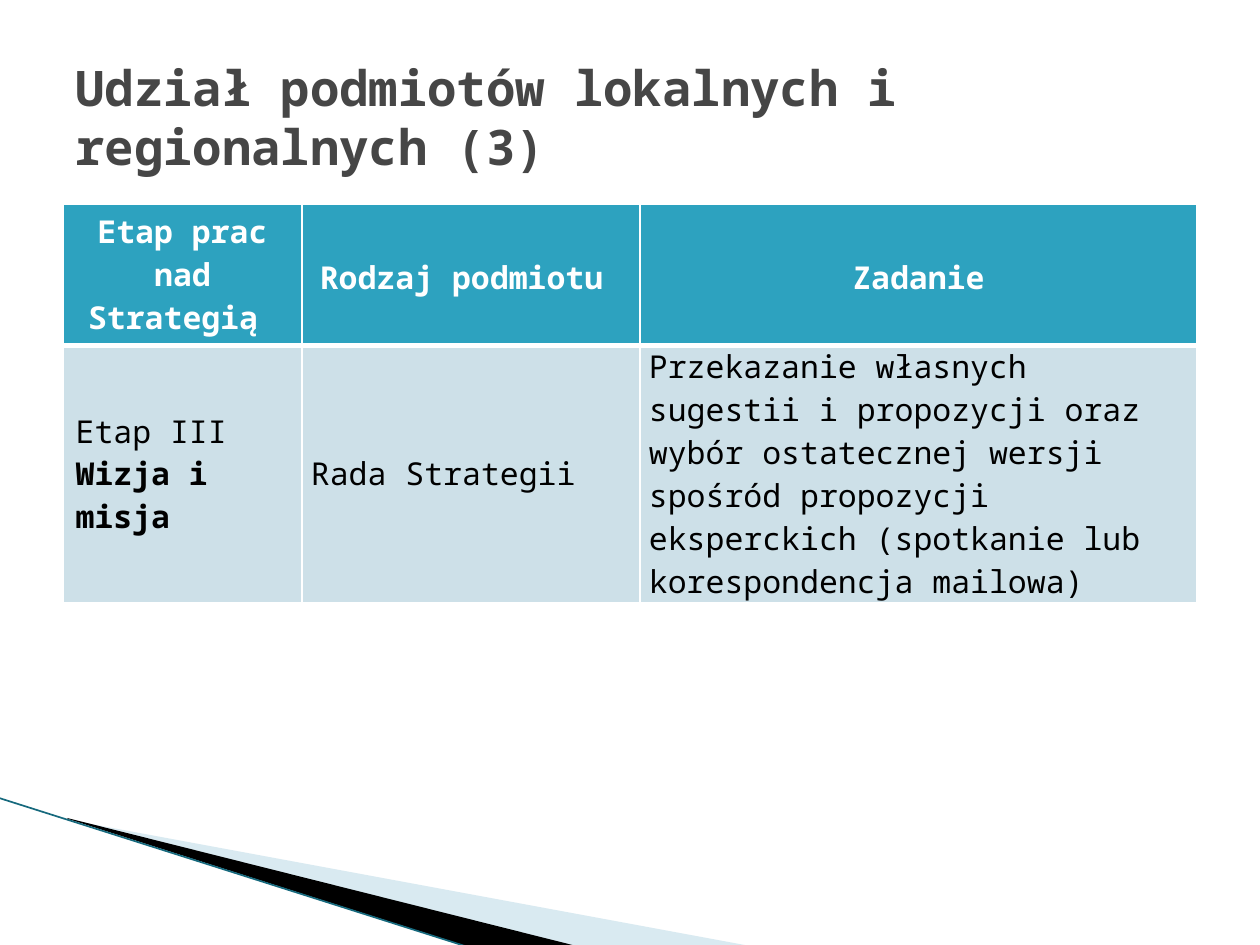
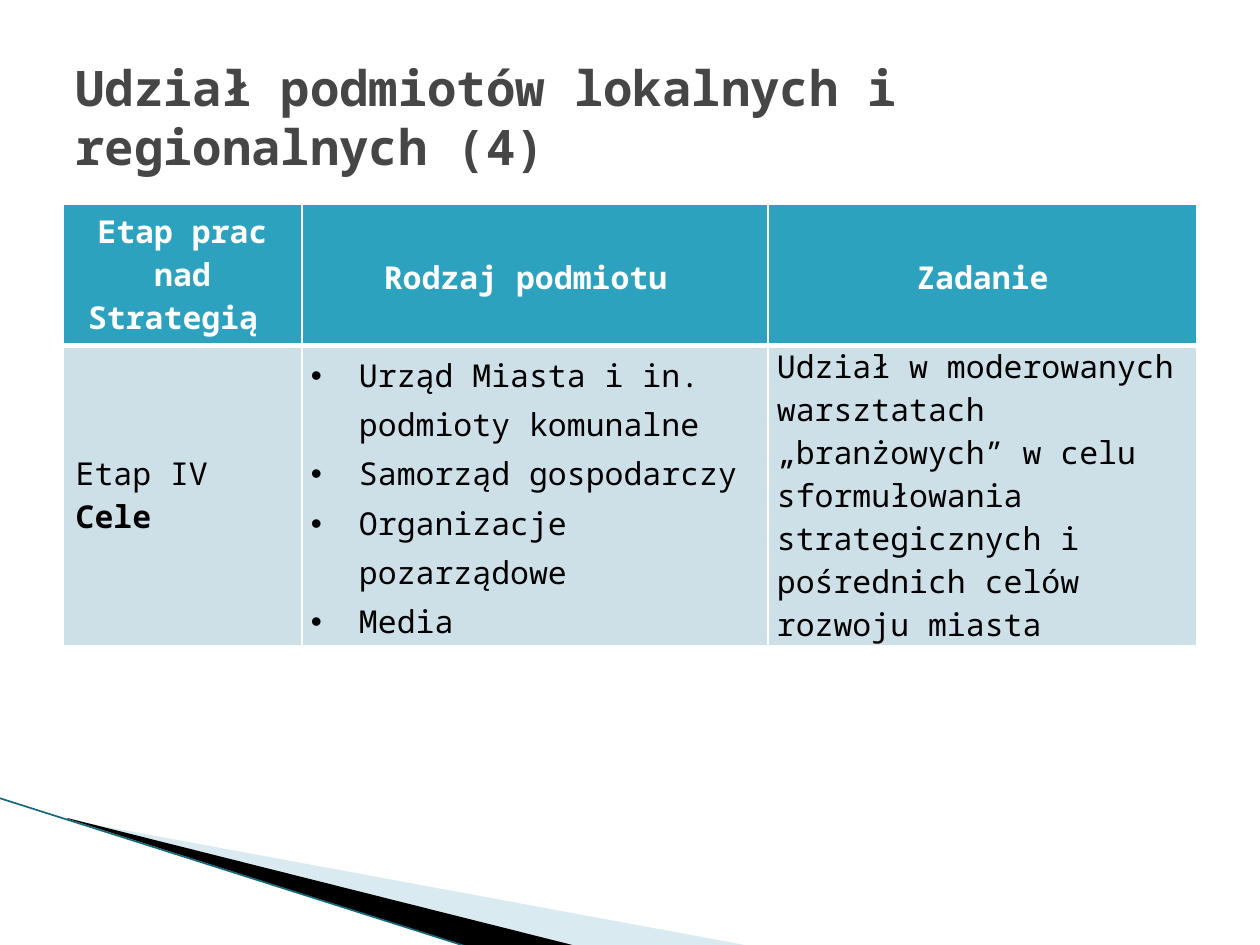
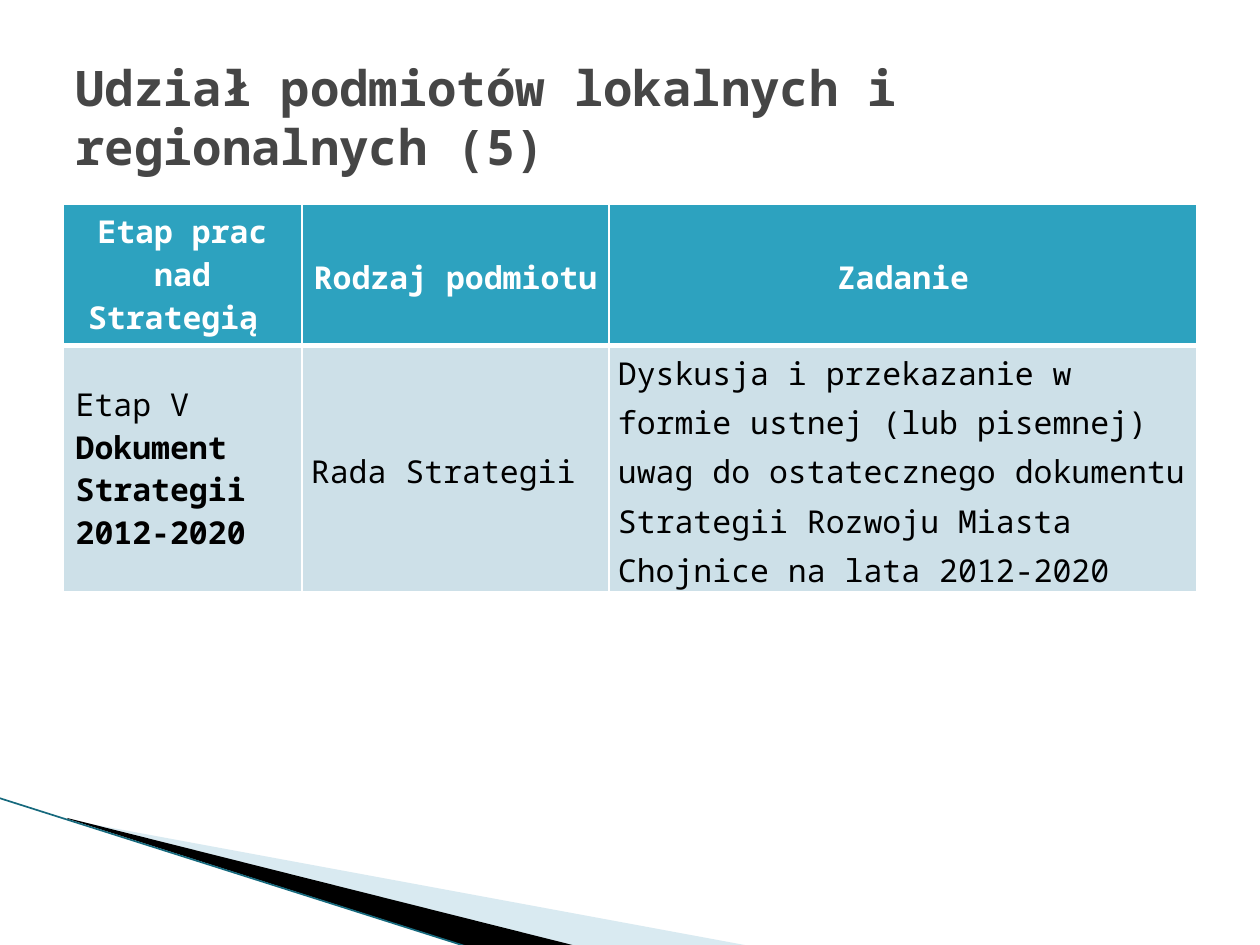
"""Builds three slides on the part local and regional bodies play in the strategy."""
from lxml.etree import SubElement
from pptx import Presentation
from pptx.dml.color import RGBColor
from pptx.enum.shapes import MSO_CONNECTOR
from pptx.enum.text import MSO_ANCHOR, PP_ALIGN
from pptx.oxml import parse_xml
from pptx.oxml.ns import nsdecls, qn
from pptx.util import Pt

SCALE = 914400 / 126
FONT = "Noto Sans Mono"
WHITE = RGBColor(0xFF, 0xFF, 0xFF)
BLACK = RGBColor(0x00, 0x00, 0x00)
TITLE_GREY = RGBColor(0x46, 0x46, 0x46)
HEADER_TEAL = RGBColor(0x2D, 0xA2, 0xBF)
BODY_BLUE = RGBColor(0xCD, 0xE0, 0xE8)
SWEEP_BLUE = RGBColor(0xA0, 0xCB, 0xDC)
EDGE_TEAL = RGBColor(0x16, 0x69, 0x7D)

HEADINGS = ["Etap prac nad Strategią ", "Rodzaj podmiotu ", "Zadanie"]
HEADER_HEIGHT = 141
STAGES = [
    {
        "number": 3,
        "columns": [239, 338, 557],
        "height": 256,
        "stage": [[("Etap III", False)], [("Wizja i misja", True)]],
        "bodies": ["Rada Strategii"],
        "task": "Przekazanie własnych sugestii i propozycji oraz wybór ostatecznej wersji "
                "spośród propozycji eksperckich (spotkanie lub korespondencja mailowa)",
    },
    {
        "number": 4,
        "columns": [239, 466, 429],
        "height": 299,
        "stage": [[("Etap IV", False)], [("Cele", True)]],
        "bodies": ["Urząd Miasta i in. podmioty komunalne", "Samorząd gospodarczy",
                   "Organizacje pozarządowe", "Media"],
        "bodies_spacing": 1.15,
        "task": "Udział w moderowanych warsztatach „branżowych” w celu sformułowania "
                "strategicznych i pośrednich celów rozwoju miasta",
    },
    {
        "number": 5,
        "columns": [239, 307, 588],
        "height": 245,
        "stage": [[("Etap V ", False), ("Dokument Strategii 2012-2020", True)]],
        "bodies": ["Rada Strategii"],
        "bodies_spacing": 1.15,
        "task": "Dyskusja i przekazanie w formie ustnej (lub pisemnej) uwag do ostatecznego "
                "dokumentu Strategii Rozwoju Miasta Chojnice na lata 2012-2020",
        "task_spacing": 1.15,
    },
]


def px(length):
    """Turn px into EMU."""
    return round(length * SCALE)


class StrategyDeck:
    """Holds the deck style and the current page."""

    def __init__(self):
        """Open an empty deck of 1260 by 945 px."""
        self.deck = Presentation()
        self.deck.slide_width, self.deck.slide_height = px(1260), px(945)
        self.page = None

    def add_page(self):
        """Start a page with the corner sweep."""
        self.page = self.deck.slides.add_slide(self.deck.slide_layouts[6])
        self.polygon([(69, 820), (750, 946), (575, 946), (69, 819)], SWEEP_BLUE, 40)
        self.polygon([(67, 818), (576, 946), (469, 947), (68, 819)], BLACK)
        self.line((-1, 798), (468, 947), EDGE_TEAL, 0.95)

    def polygon(self, points, color, opacity=100):
        """Draw a closed, filled outline."""
        builder = self.page.shapes.build_freeform(*points[0], scale=SCALE)
        builder.add_line_segments(points[1:], close=True)
        shape = builder.convert_to_shape()
        shape.shadow.inherit = False
        shape.fill.solid()
        shape.fill.fore_color.rgb = color
        shape.line.fill.background()
        if opacity < 100:
            tone = shape.fill._xPr.find(".//" + qn("a:srgbClr"))
            SubElement(tone, qn("a:alpha"), val=str(opacity * 1000))

    def line(self, start, end, color, width):
        """Draw a straight line without shadow."""
        connector = self.page.shapes.add_connector(
            MSO_CONNECTOR.STRAIGHT, *map(px, start + end))
        connector.line.color.rgb = color
        connector.line.width = Pt(width)
        SubElement(connector._element.spPr, qn("a:effectLst"))

    def style(self, para, size, color, bold=None):
        """Set the font of a paragraph."""
        font = para.font
        font.name, font.size, font.bold = FONT, Pt(size), bold
        font.color.rgb = color

    def title(self, text):
        """Add the page title."""
        box = self.page.shapes.add_textbox(px(63), px(38), px(1134), px(157))
        frame = box.text_frame
        frame.word_wrap = True
        frame.vertical_anchor = MSO_ANCHOR.MIDDLE
        para = frame.paragraphs[0]
        para.text = text
        self.style(para, 28, TITLE_GREY, True)

    def table(self, columns, heights):
        """Add a table and return it."""
        frame = self.page.shapes.add_table(
            len(heights), len(columns), px(63), px(204), px(sum(columns)), px(sum(heights)))
        table = frame.table
        table.horz_banding = False
        for column, width in zip(table.columns, columns):
            column.width = px(width)
        for row, height in zip(table.rows, heights):
            row.height = px(height)
        return table

    def cell(self, cell, paragraphs, header=False, tight=True, anchor=MSO_ANCHOR.MIDDLE,
             spacing=None, bullets=False):
        """Fill a cell with paragraphs of (text, bold) spans."""
        cell.fill.solid()
        cell.fill.fore_color.rgb = HEADER_TEAL if header else BODY_BLUE
        cell.vertical_anchor = anchor
        if tight:
            cell.margin_left = cell.margin_right = px(9)
            cell.margin_top = cell.margin_bottom = 0
        self.borders(cell, top=1 if header else 3, bottom=3 if header else 1)
        frame = cell.text_frame
        for index, spans in enumerate(paragraphs):
            para = frame.add_paragraph() if index else frame.paragraphs[0]
            if header:
                para.alignment = PP_ALIGN.CENTER
            if spacing:
                para.line_spacing = spacing
            if bullets:
                self.bullet(para)
            for text, bold in spans:
                span = para.add_run()
                span.text = text
                span.font.bold = bold
            self.style(para, 18, WHITE if header else BLACK)

    def bullet(self, para):
        """Give a paragraph a hanging bullet."""
        properties = para._p.get_or_add_pPr()
        properties.set("marL", str(px(48)))
        properties.set("indent", str(-px(48)))
        SubElement(properties, qn("a:buFont"), typeface="Arial")
        SubElement(properties, qn("a:buChar"), char="•")

    def borders(self, cell, top, bottom):
        """Draw white borders round a cell."""
        properties = cell._tc.get_or_add_tcPr()
        for index, (side, width) in enumerate(zip("LRTB", (1, 1, top, bottom))):
            properties.insert(index, parse_xml(
                f'<a:ln{side} {nsdecls("a")} w="{Pt(width)}"><a:solidFill>'
                f'<a:srgbClr val="{WHITE}"/></a:solidFill></a:ln{side}>'))

    def stage_page(self, stage):
        """Build the page of one stage."""
        self.add_page()
        table = self.table(stage["columns"], [HEADER_HEIGHT, stage["height"]])
        for index, heading in enumerate(HEADINGS):
            first = index == 0
            self.cell(table.cell(0, index), [[(heading, True)]], header=True,
                      tight=not first, spacing=None if first else 1.15,
                      anchor=MSO_ANCHOR.TOP if first else MSO_ANCHOR.MIDDLE)
        self.cell(table.cell(1, 0), stage["stage"], tight=False)
        self.cell(table.cell(1, 1), [[(body, False)] for body in stage["bodies"]],
                  spacing=stage.get("bodies_spacing"), bullets=len(stage["bodies"]) > 1)
        self.cell(table.cell(1, 2), [[(stage["task"], False)]],
                  spacing=stage.get("task_spacing"))
        self.title(f"Udział podmiotów lokalnych i regionalnych ({stage['number']})")


def main():
    """Build and save the deck."""
    builder = StrategyDeck()
    for stage in STAGES:
        builder.stage_page(stage)
    builder.deck.save("out.pptx")


if __name__ == "__main__":
    main()
